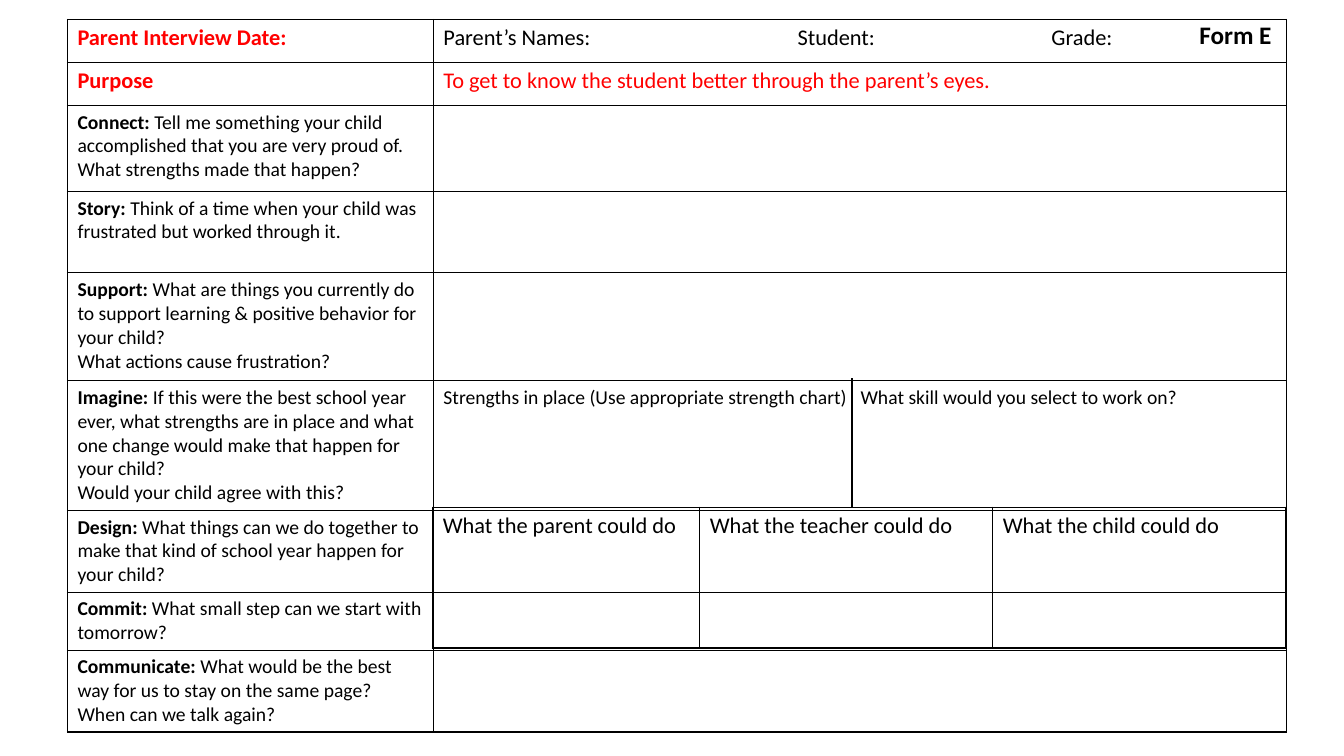
"""Build the parent interview form (Form E) as a one-page slide."""
from lxml import etree
from pptx import Presentation
from pptx.dml.color import RGBColor
from pptx.enum import text
from pptx.oxml import ns
from pptx.util import Pt

BLACK = RGBColor(0, 0, 0)
RED = RGBColor(255, 0, 0)
FONT = "Calibri"
BORDER = 1

HEADINGS = [
    ("Parent Interview Date:", "Parent’s Names:\tStudent:\tGrade:", BLACK, (253, 434.3)),
    ("Purpose", "To get to know the student better through the parent’s eyes.", RED, ()),
]
QUESTIONS = [
    ("Connect: ", ["Tell me something your child accomplished that you are very proud of. "
                   "What strengths made that happen?"]),
    ("Story: ", ["Think of a time when your child was frustrated but worked through it."]),
    ("Support: ", ["What are things you currently do to support learning & positive behavior "
                   "for your child?",
                   "What actions cause frustration?"]),
    ("Imagine: ", ["If this were the best school year ever, what strengths are in place and what "
                   "one change would make that happen for your child?",
                   "Would your child agree with this?"]),
    ("Design: ", ["What things can we do together to make that kind of school year happen for "
                  "your child?"]),
    ("Commit: ", ["What small step can we start with tomorrow?"]),
    ("Communicate: ", ["What would be the best way for us to stay on the same page?",
                       "When can we talk again?"]),
]
IMAGINE_ROW = 5
IMAGINE_PROMPTS = ("Strengths in place (Use appropriate strength chart)\t"
                   "What skill would you select to work on?")
ACTIONS = ["What the parent could do", "What the teacher could do", "What the child could do"]

FORM_LEFT, FORM_TOP = 48.2, 13.9
FORM_COLUMNS = [261.4, 609.1]
FORM_ROWS = [30.7, 30.7, 61.4, 58.2, 77.1, 92.6, 58.5, 41.4, 58.5]
ACTIONS_LEFT, ACTIONS_TOP = 309.1, 362.2
ACTION_COLUMNS = [190.8, 209.2, 209.2]
ACTION_ROWS = [100.7]
DIVIDER_X, DIVIDER_TOP, DIVIDER_BOTTOM = 608.4, 270, 361.8


def write(para, words, size=14, bold=False, color=BLACK, tabs=()):
    """Add formatted words to a paragraph, with optional tab stops."""
    if tabs:
        tab_list = etree.SubElement(para._p.get_or_add_pPr(), ns.qn("a:tabLst"))
        for stop in tabs:
            etree.SubElement(tab_list, ns.qn("a:tab"), pos=str(Pt(stop)), algn="l")
    span = para.add_run()
    span.text = words
    span.font.name = FONT
    span.font.size = Pt(size)
    span.font.bold = bold
    span.font.color.rgb = color


def outline(cell):
    """Give a cell a thin black border and no fill."""
    properties = cell._tc.get_or_add_tcPr()
    for side in ("lnL", "lnR", "lnT", "lnB"):
        line = etree.SubElement(properties, ns.qn("a:" + side), w=str(Pt(BORDER)))
        fill = etree.SubElement(line, ns.qn("a:solidFill"))
        etree.SubElement(fill, ns.qn("a:srgbClr"), val=str(BLACK))
    cell.fill.background()


def add_grid(page, left, top, columns, rows):
    """Add a plain outlined table with the given column widths and row heights."""
    table = page.shapes.add_table(len(rows), len(columns), Pt(left), Pt(top),
                                  Pt(sum(columns)), Pt(sum(rows))).table
    table.first_row = table.horz_banding = False
    for column, width in zip(table.columns, columns):
        column.width = Pt(width)
    for row, height in zip(table.rows, rows):
        row.height = Pt(height)
    for cell in table.iter_cells():
        outline(cell)
    return table


def add_form(page):
    """Add the main table of headings and interview questions."""
    form = add_grid(page, FORM_LEFT, FORM_TOP, FORM_COLUMNS, FORM_ROWS)
    for row, (label, words, color, tabs) in enumerate(HEADINGS):
        write(form.cell(row, 0).text_frame.paragraphs[0], label, size=16, bold=True, color=RED)
        write(form.cell(row, 1).text_frame.paragraphs[0], words, size=16, color=color, tabs=tabs)
    for row, (label, lines) in enumerate(QUESTIONS, len(HEADINGS)):
        frame = form.cell(row, 0).text_frame
        write(frame.paragraphs[0], label, bold=True)
        write(frame.paragraphs[0], lines[0])
        for line in lines[1:]:
            write(frame.add_paragraph(), line)
    write(form.cell(IMAGINE_ROW, 1).text_frame.paragraphs[0], IMAGINE_PROMPTS, tabs=(297.9,))


def add_actions(page):
    """Add the table of actions laid over the design and commit rows."""
    actions = add_grid(page, ACTIONS_LEFT, ACTIONS_TOP, ACTION_COLUMNS, ACTION_ROWS)
    for column, words in enumerate(ACTIONS):
        write(actions.cell(0, column).text_frame.paragraphs[0], words, size=16)


def add_form_label(page):
    """Add the form letter in the top right corner."""
    box = page.shapes.add_textbox(Pt(849.6), Pt(10.1), Pt(66.2), Pt(29))
    box.text_frame.word_wrap = False
    box.text_frame.auto_size = text.MSO_AUTO_SIZE.SHAPE_TO_FIT_TEXT
    write(box.text_frame.paragraphs[0], "Form E", size=18, bold=True)


def add_divider(page):
    """Add the line between the two imagine prompts."""
    divider = page.shapes.add_connector(1, Pt(DIVIDER_X), Pt(DIVIDER_TOP),
                                        Pt(DIVIDER_X), Pt(DIVIDER_BOTTOM))
    divider.line.color.rgb = BLACK
    divider.line.width = Pt(1.5)
    etree.SubElement(divider._element.spPr, ns.qn("a:effectLst"))


def main():
    """Build and save the deck."""
    deck = Presentation()
    deck.slide_width, deck.slide_height = Pt(960), Pt(540)
    page = deck.slides.add_slide(deck.slide_layouts.get_by_name("Blank"))
    add_form(page)
    add_actions(page)
    add_form_label(page)
    add_divider(page)
    deck.save("out.pptx")


if __name__ == "__main__":
    main()
